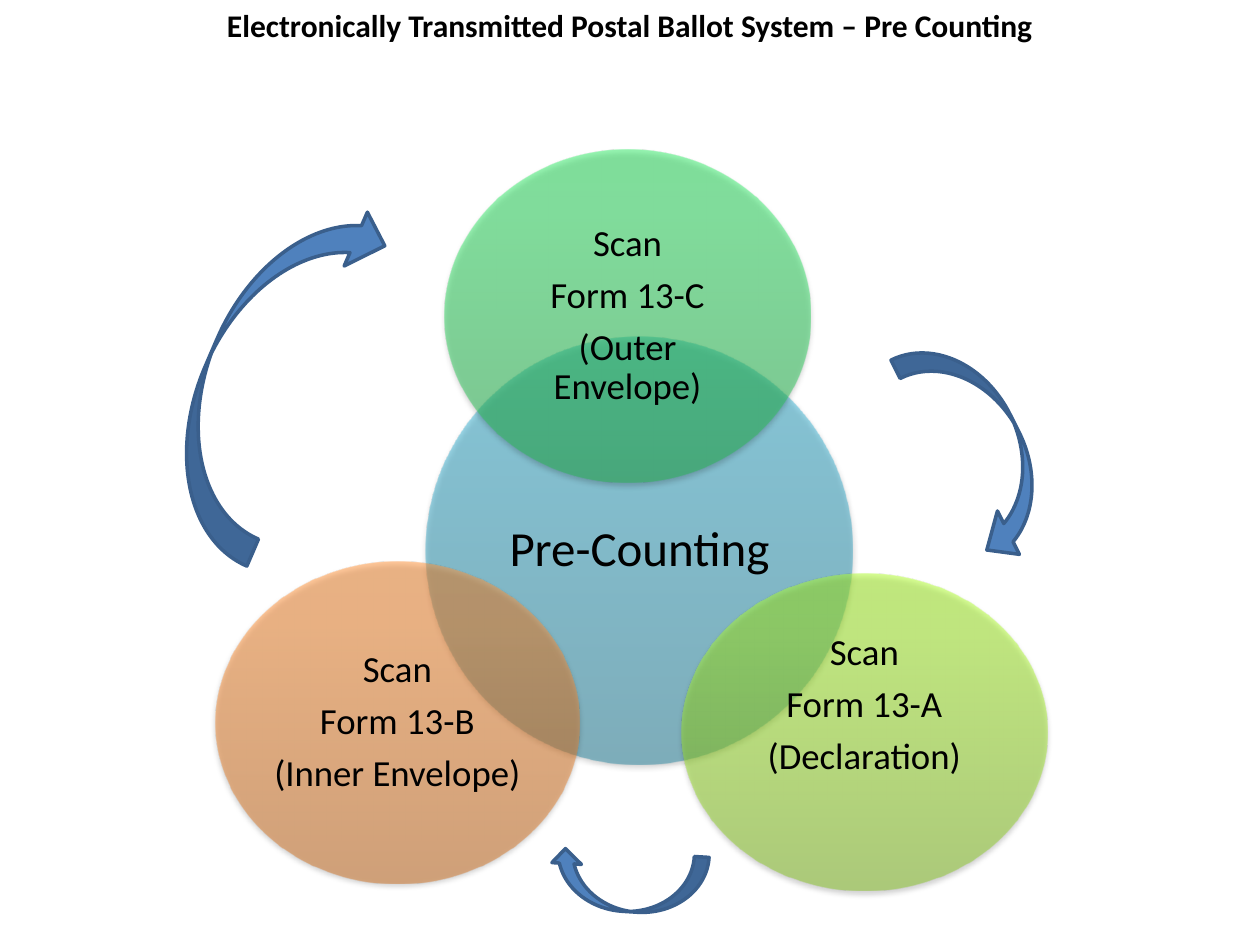
from math import sqrt
from lxml import etree
from pptx import Presentation
from pptx.dml.color import RGBColor
from pptx.enum.shapes import MSO_SHAPE as Shape
from pptx.enum.text import MSO_ANCHOR as Anchor, PP_ALIGN as Align
from pptx.oxml import parse_xml
from pptx.oxml.ns import nsdecls, qn
from pptx.util import Pt

COLORS = {
    "text": "000000", "shadow": "000000", "arrow": "4F81BD", "arrow_line": "3A5F8C",
    "hub": ("2A88A2", "37B1D2", "34B4D6"),
    "outer": ("25B24E", "30E765", "2DEB64"),
    "declaration": ("85C022", "ADF92C", "AFFE28"),
    "inner": ("CC6E20", "FF9034", "FF9136"),
}
GRADIENT_STOPS = (0, 80, 100)
INSCRIBED = 1 / sqrt(2)  # side of the text area inside an ellipse


def set_all(target, values):
    for name, value in values.items():
        setattr(target, name, value)


def add_text(page, box, lines, font, margins=(0, 0, 0, 0), anchor=Anchor.MIDDLE, spacing=None):
    frame = page.shapes.add_textbox(*map(Pt, box)).text_frame
    sides = ("margin_left", "margin_top", "margin_right", "margin_bottom")
    set_all(frame, dict(zip(sides, map(Pt, margins)), word_wrap=True, vertical_anchor=anchor))
    for index, line in enumerate(lines):
        para = frame.add_paragraph() if index else frame.paragraphs[0]
        set_all(para, {"alignment": Align.CENTER, **(spacing or {})})
        span = para.add_run()
        span.text = line
        set_all(span.font, {"name": "Calibri", **font})
        span.font.color.rgb = RGBColor.from_string(COLORS["text"])


def add_title(page, box):
    add_text(page, box, ["Electronically Transmitted Postal Ballot System – Pre Counting"],
             {"size": Pt(18), "bold": True}, (7.2, 3.6, 7.2, 3.6), Anchor.TOP)


def add_ellipse(page, box, colors):
    """Half-transparent ellipse with a vertical gradient and a soft shadow."""
    ellipse = page.shapes.add_shape(Shape.OVAL, *map(Pt, box))
    ellipse.line.fill.background()
    ellipse.fill.gradient()
    ellipse.fill.gradient_angle = 90
    properties = ellipse.element.spPr
    stops = properties.find(qn("a:gradFill")).find(qn("a:gsLst"))
    for stop in list(stops):
        stops.remove(stop)
    for position, color in zip(GRADIENT_STOPS, colors):
        stop = etree.SubElement(stops, qn("a:gs"), pos=str(position * 1000))
        tint = etree.SubElement(stop, qn("a:srgbClr"), val=color)
        etree.SubElement(tint, qn("a:alpha"), val="50000")
    properties.append(parse_xml(
        f'<a:effectLst {nsdecls("a")}><a:outerShdw blurRad="{Pt(3.1)}" dist="{Pt(1.8)}" '
        f'dir="5400000" rotWithShape="0"><a:srgbClr val="{COLORS["shadow"]}">'
        '<a:alpha val="35000"/></a:srgbClr></a:outerShdw></a:effectLst>'))


def add_circles(page, box):
    left, top = box[:2]
    # place in the box, colour, lines, text size, room kept free below the text
    circles = [
        ((120.4, 107, 244, 244), "hub", ["Pre-Counting"], 28, 0),
        ((131.2, 0, 208.8, 190), "outer", ["Scan", "Form 13-C", "(Outer Envelope)"], 21, 0),
        ((266.5, 242, 208.8, 181.4), "declaration", ["Scan", "Form 13-A", "(Declaration)"], 21, 30),
        ((0, 235.4, 208.1, 183.6), "inner", ["Scan", "Form 13-B", "(Inner Envelope)"], 21, 0),
    ]
    for (x, y, width, height), color, lines, size, below in circles:
        x, y = left + x, top + y
        add_ellipse(page, (x, y, width, height), COLORS[color])
        edge = (1 - INSCRIBED) / 2
        area = (x + width * edge, y + height * edge, width * INSCRIBED, height * INSCRIBED)
        add_text(page, area, lines, {"size": Pt(size)}, (2, 2, 2, 2 + below),
                 spacing={"line_spacing": 0.9, "space_after": Pt(size / 3)})


def add_arrows(page, box):
    left, top = box[:2]
    # place in the box, shape, rotation, adjustments, mirrored
    arrows = [
        ((417.6, 85, 46.8, 135.4), Shape.CURVED_LEFT_ARROW, 333.2, (0.25, 0.593, 0.331), False),
        ((222.5, 355.7, 33.8, 90.7), Shape.CURVED_LEFT_ARROW, 93.5, (), False),
        ((0, 0, 67, 216), Shape.CURVED_RIGHT_ARROW, 203.3, (), True),
    ]
    for (x, y, width, height), kind, rotation, adjustments, mirrored in arrows:
        arrow = page.shapes.add_shape(kind, Pt(left + x), Pt(top + y), Pt(width), Pt(height))
        arrow.rotation = rotation
        arrow.shadow.inherit = False
        for index, value in enumerate(adjustments):
            arrow.adjustments[index] = value
        if mirrored:
            arrow.element.spPr.find(qn("a:xfrm")).set("flipH", "1")
        arrow.fill.solid()
        arrow.fill.fore_color.rgb = RGBColor.from_string(COLORS["arrow"])
        arrow.line.color.rgb = RGBColor.from_string(COLORS["arrow_line"])
        arrow.line.width = Pt(2)


def main():
    deck = Presentation()
    set_all(deck, {"slide_width": Pt(720), "slide_height": Pt(540)})
    page = deck.slides.add_slide(deck.slide_layouts[6])
    add_title(page, (0, 0, 720, 29))
    add_circles(page, (123, 85.7, 475.3, 423.4))
    add_arrows(page, (119.5, 103, 464.4, 446.4))
    deck.save("out.pptx")


if __name__ == "__main__":
    main()
